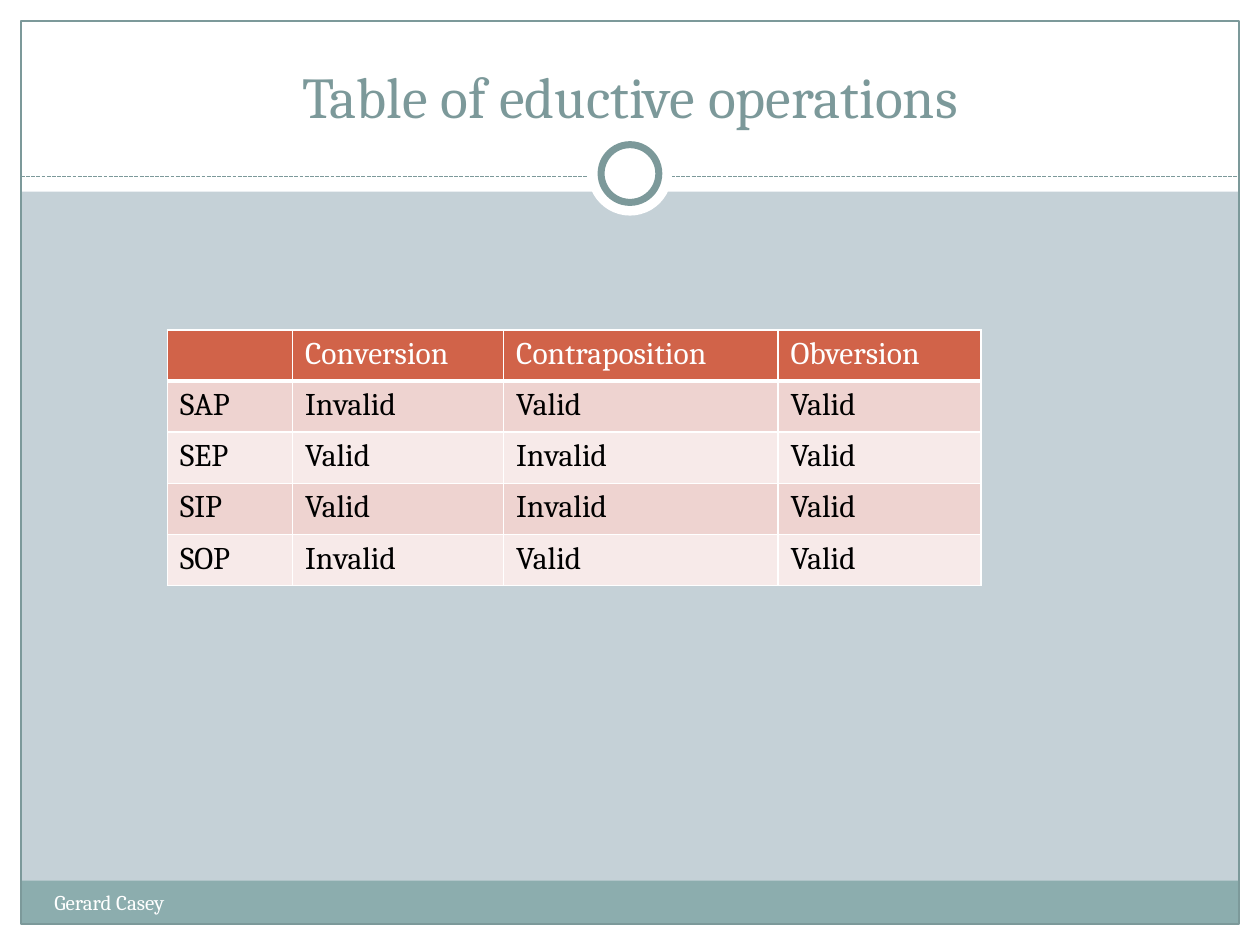
import pptx
import pptx.util
import pptx.oxml
import pptx.oxml.ns
import pptx.dml.color
import pptx.enum.dml
import pptx.enum.shapes
import pptx.enum.text

Pt = pptx.util.Pt
SHAPES = pptx.enum.shapes.MSO_SHAPE
FONT = "Cambria"
WHITE, TEAL, BAND = "FFFFFF", "7C999A", "8CADAE"
WIDTH, HEIGHT, MARGIN = 720, 540, 12
RULE_Y, RING_CENTRE_Y = 100.8, 99.2

ROWS = [
    ["", "Conversion", "Contraposition", "Obversion"],
    ["SAP", "Invalid", "Valid", "Valid"],
    ["SEP", "Valid", "Invalid", "Valid"],
    ["SIP", "Valid", "Invalid", "Valid"],
    ["SOP", "Invalid", "Valid", "Valid"],
]
COLUMN_WIDTHS = [71.5, 120.6, 156.8, 115.9]
ROW_HEIGHT = 29.2
HEADER_FILL, ROW_FILLS = "D16349", ["EED3D0", "F7EAE9"]


def colour(value):
    return pptx.dml.color.RGBColor.from_string(value)


def set_fill(fill, value):
    fill.solid()
    fill.fore_color.rgb = colour(value)


def write_text(frame, text, size, text_colour, align=None):
    """Write one paragraph with a single formatted run."""
    para = frame.paragraphs[0]
    para.alignment = align
    span = para.add_run()
    span.text = text
    formats = {"name": FONT, "size": Pt(size), "bold": False}
    for name, value in formats.items():
        setattr(span.font, name, value)
    span.font.color.rgb = colour(text_colour)


def place(shape, left, top, width, height):
    position = {"left": left, "top": top, "width": width, "height": height}
    for name, value in position.items():
        setattr(shape, name, Pt(value))


def add_panel(page, kind, left, top, width, height, fill=None, line=None, weight=0.75):
    panel = page.shapes.add_shape(kind, Pt(left), Pt(top), Pt(width), Pt(height))
    panel.shadow.inherit = False
    if fill:
        set_fill(panel.fill, fill)
    else:
        panel.fill.background()
    if line:
        set_fill(panel.line.fill, line)
        panel.line.width = Pt(weight)
    else:
        panel.line.fill.background()


def add_circle(page, diameter, **formats):
    add_panel(page, SHAPES.OVAL, (WIDTH - diameter) / 2, RING_CENTRE_Y - diameter / 2,
              diameter, diameter, **formats)


def add_dashed_rule(page):
    rule = page.shapes.add_connector(
        pptx.enum.shapes.MSO_CONNECTOR.STRAIGHT,
        Pt(MARGIN), Pt(RULE_Y), Pt(WIDTH - MARGIN), Pt(RULE_Y))
    set_fill(rule.line.fill, TEAL)
    rule.line.width = Pt(0.75)
    rule.line.dash_style = pptx.enum.dml.MSO_LINE.SQUARE_DOT
    properties = rule.element.spPr
    properties.append(pptx.oxml.parse_xml(
        f"<a:effectLst {pptx.oxml.ns.nsdecls('a')}/>"))


def add_borders(cell, bottom_weight):
    properties = cell._tc.get_or_add_tcPr()
    for side, weight in {"L": 1, "R": 1, "T": 1, "B": bottom_weight}.items():
        properties.append(pptx.oxml.parse_xml(
            f"<a:ln{side} {pptx.oxml.ns.nsdecls('a')} w='{Pt(weight)}'>"
            f"<a:solidFill><a:srgbClr val='{WHITE}'/></a:solidFill></a:ln{side}>"))


def add_operations_table(page, left, top):
    table = page.shapes.add_table(
        len(ROWS), len(COLUMN_WIDTHS), Pt(left), Pt(top),
        Pt(sum(COLUMN_WIDTHS)), Pt(ROW_HEIGHT * len(ROWS))).table
    for column, width in zip(table.columns, COLUMN_WIDTHS):
        column.width = Pt(width)
    for index, texts in enumerate(ROWS):
        header = index == 0
        table.rows[index].height = Pt(ROW_HEIGHT)
        for cell, text in zip(table.rows[index].cells, texts):
            add_borders(cell, 3 if header else 1)
            set_fill(cell.fill, HEADER_FILL if header else ROW_FILLS[(index - 1) % 2])
            if text:
                write_text(cell.text_frame, text, 18, WHITE if header else "000000")


def add_frame(page):
    """White margins, footer band, outline, rule and ring."""
    for area in [
        (0, HEIGHT - MARGIN, WIDTH, MARGIN),
        (0, 0, WIDTH, 109.5),
        (0, 0, MARGIN, HEIGHT),
        (WIDTH - MARGIN, 0, MARGIN, HEIGHT),
    ]:
        add_panel(page, SHAPES.RECTANGLE, *area, fill=WHITE)
    inner_width = WIDTH - 2 * MARGIN
    add_panel(page, SHAPES.RECTANGLE, MARGIN, 503.3, inner_width, 24.5, fill=BAND)
    add_panel(page, SHAPES.RECTANGLE, MARGIN, MARGIN, inner_width,
              HEIGHT - 2 * MARGIN, line=TEAL)
    add_dashed_rule(page)
    add_circle(page, 48, fill=WHITE)
    add_circle(page, 33, fill=WHITE, line=TEAL, weight=4)


def add_title(page, text):
    title = page.shapes.title
    place(title, 24, 18, 672, 60)
    frame = title.text_frame
    frame.vertical_anchor = pptx.enum.text.MSO_ANCHOR.BOTTOM
    write_text(frame, text, 33, TEAL, pptx.enum.text.PP_ALIGN.CENTER)
    # Bring the title in front of the white header
    title.element.getparent().append(title.element)


def add_footer(page, text):
    box = page.shapes.add_textbox(Pt(24), Pt(504.7), Pt(282), Pt(28.8))
    box.text_frame.word_wrap = True
    write_text(box.text_frame, text, 12, WHITE)


def main():
    deck = pptx.Presentation()
    deck.slide_width, deck.slide_height = Pt(WIDTH), Pt(HEIGHT)
    page = deck.slides.add_slide(deck.slide_layouts[5])
    set_fill(page.background.fill, "C5D1D7")
    add_frame(page)
    add_title(page, "Table of eductive operations")
    add_footer(page, "Gerard Casey")
    add_operations_table(page, 95.7, 188.6)
    deck.save("out.pptx")


if __name__ == "__main__":
    main()
